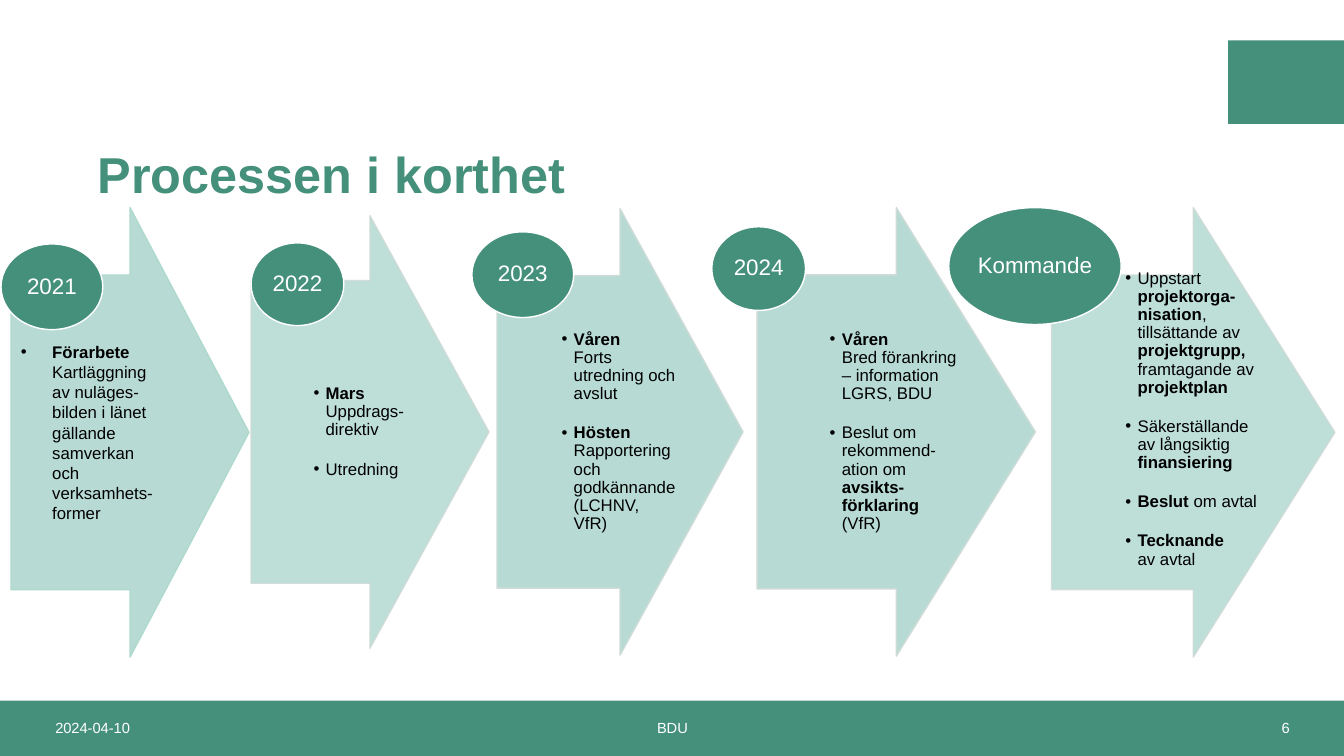
from dataclasses import dataclass

from lxml import etree
from pptx import Presentation, util as u
from pptx.dml.color import RGBColor
from pptx.enum import shapes, text
from pptx.oxml import ns

GREEN, MINT, PALE, WHITE, BLACK = "45907A", "B7DBD4", "CFDBD7", "FFFFFF", "000000"
Frame = tuple[float, float, float, float]


@dataclass
class Step:
    label: str
    arrow: Frame
    oval: Frame
    items: list[str]
    alpha: int = 100
    edge: str = PALE
    text_in_arrow: bool = False
    lift: float = 0


@dataclass
class Label:
    words: str
    frame: Frame
    size: float
    color: str
    align: text.PP_ALIGN
    bold: bool = False


STEPS = [
    Step("2021", (0.11, 2.06, 2.36, 4.46), (0.01, 2.42, 1.01, 0.85),
         ["**Förarbete**\nKartläggning av nuläges-bilden i länet gällande samverkan "
          "och verksamhets-former"],
         edge="AFD9CC", text_in_arrow=True),
    Step("2022", (2.49, 2.14, 2.36, 4.29), (2.49, 2.41, 0.92, 0.82),
         ["**Mars**\nUppdrags-direktiv", "Utredning"], alpha=90),
    Step("2023", (4.93, 2.07, 2.44, 4.43), (4.68, 2.3, 1.01, 0.85),
         ["**Våren**\nForts utredning och avslut",
          "**Hösten**\nRapportering och godkännande (LCHNV, VfR)"]),
    Step("2024", (7.51, 2.06, 2.76, 4.45), (7.06, 2.25, 0.93, 0.83),
         ["**Våren**\nBred förankring – information LGRS, BDU",
          "Beslut om rekommend-ation om **avsikts-förklaring** (VfR)"]),
    Step("Kommande", (10.43, 2.06, 2.81, 4.46), (9.41, 2.06, 1.71, 1.16),
         ["Uppstart **projektorga-nisation**, tillsättande av **projektgrupp,** "
          "framtagande av **projektplan**",
          "Säkerställande av långsiktig **finansiering**",
          "**Beslut** om avtal",
          "**Tecknande**\nav avtal"],
         alpha=90, lift=0.13),
]

LABELS = [
    Label("Processen i korthet", (0.87, 1.1, 11.39, 1.32), 36, GREEN, text.PP_ALIGN.LEFT, True),
    Label("2024-04-10", (0.45, 6.95, 3.47, 0.55), 10.5, WHITE, text.PP_ALIGN.LEFT),
    Label("BDU", (4.42, 6.95, 4.5, 0.55), 10.5, WHITE, text.PP_ALIGN.CENTER),
    Label("6", (9.42, 6.95, 3.47, 0.55), 10.5, WHITE, text.PP_ALIGN.RIGHT),
]


def rgb(value: str) -> RGBColor:
    return RGBColor.from_string(value)


def inches(frame: Frame) -> list[u.Length]:
    return [u.Inches(length) for length in frame]


def set_insets(frame, left: float, top: float, right: float, bottom: float) -> None:
    frame.margin_left, frame.margin_top, frame.margin_right, frame.margin_bottom = inches(
        (left, top, right, bottom))


def set_font(font, size: float, color: str) -> None:
    font.name, font.size = "Arial", u.Pt(size)
    font.color.rgb = rgb(color)


def set_alpha(shape, percent: int) -> None:
    for color in shape._element.spPr.iter(ns.qn("a:srgbClr")):
        etree.SubElement(color, ns.qn("a:alpha"), val=str(percent * 1000))


def add_figure(page, kind, frame: Frame, fill: str, edge: str | None = None):
    shape = page.shapes.add_shape(kind, *inches(frame))
    shape.shadow.inherit = False
    shape.fill.solid()
    shape.fill.fore_color.rgb = rgb(fill)
    if edge:
        shape.line.color.rgb = rgb(edge)
        shape.line.width = u.Pt(1)
    else:
        shape.line.fill.background()
    return shape


def add_box(page, frame: Frame):
    box = page.shapes.add_textbox(*inches(frame)).text_frame
    box.word_wrap = True
    box.vertical_anchor = text.MSO_ANCHOR.MIDDLE
    return box


def write_line(frame, words: str, size: float, color: str, align, bold: bool = False) -> None:
    para = frame.paragraphs[0]
    para.alignment = align
    para.line_spacing = 0.9
    para.add_run().text = words
    set_font(para.font, size, color)
    para.font.bold = bold


def write_items(frame, items: list[str], indent: float, spacing: float) -> None:
    frame.vertical_anchor = text.MSO_ANCHOR.MIDDLE
    for index, item in enumerate(items):
        para = frame.add_paragraph() if index else frame.paragraphs[0]
        para.alignment = text.PP_ALIGN.LEFT
        para.line_spacing = spacing
        if index < len(items) - 1:
            para.space_after = u.Pt(15)
        props = para._p.get_or_add_pPr()
        props.set("marL", str(u.Inches(indent)))
        props.set("indent", str(-u.Inches(indent)))
        etree.SubElement(props, ns.qn("a:buFont"), typeface="Arial")
        etree.SubElement(props, ns.qn("a:buChar"), char="•")
        set_font(para.font, 12, BLACK)
        for part, words in enumerate(item.split("**")):
            for row, line in enumerate(words.split("\n")):
                if row:
                    para.add_line_break()
                if line:
                    span = para.add_run()
                    span.text = line
                    span.font.bold = part % 2 == 1


def add_step(page, step: Step) -> None:
    arrow = add_figure(page, shapes.MSO_SHAPE.RIGHT_ARROW, step.arrow, MINT, step.edge)
    arrow.adjustments[0] = 0.7
    if step.alpha < 100:
        set_alpha(arrow, step.alpha)
    if step.text_in_arrow:
        write_items(arrow.text_frame, step.items, 0.31, 1.0)
    else:
        left, top, width, height = step.arrow
        box = add_box(page, (left + width * 0.25, top + height * 0.15 - step.lift,
                             width * 0.4875, height * 0.7))
        set_insets(box, 0.03, 0.01, 0.02, 0.01)
        write_items(box, step.items, 0.12, 0.9)
    oval = add_figure(page, shapes.MSO_SHAPE.OVAL, step.oval, GREEN, WHITE).text_frame
    set_insets(oval, 0.01, 0.01, 0.01, 0.01)
    oval.vertical_anchor = text.MSO_ANCHOR.MIDDLE
    write_line(oval, step.label, 16, WHITE, text.PP_ALIGN.CENTER)


def main() -> None:
    deck = Presentation()
    deck.slide_width, deck.slide_height = u.Inches(13.33), u.Inches(7.5)
    page = deck.slides.add_slide(deck.slide_layouts[6])
    for band in ((12.18, 0.4, 1.15, 0.83), (0, 6.95, 13.33, 0.55)):
        add_figure(page, shapes.MSO_SHAPE.RECTANGLE, band, GREEN)
    for step in STEPS:
        add_step(page, step)
    for label in LABELS:
        write_line(add_box(page, label.frame), label.words, label.size, label.color,
                   label.align, label.bold)
    deck.save("out.pptx")


if __name__ == "__main__":
    main()
